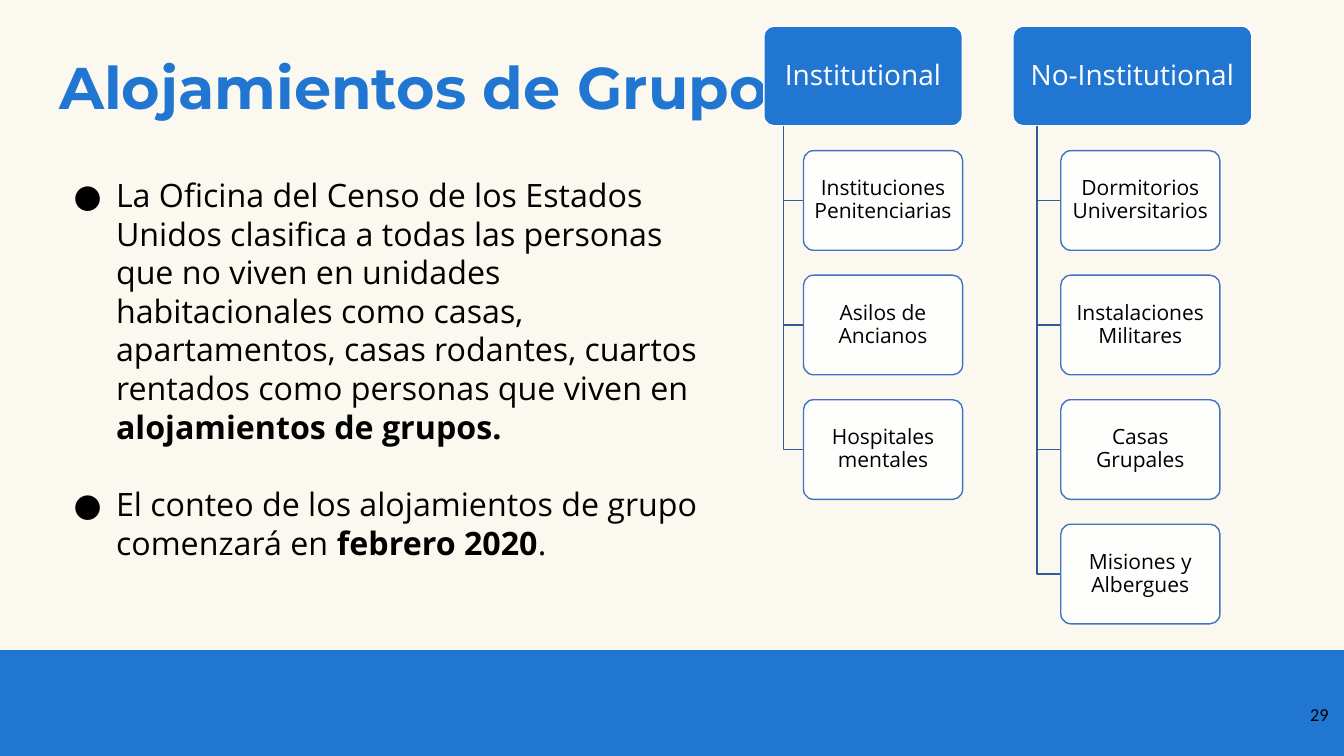
import dataclasses

import pptx
import pptx.dml.color
import pptx.enum.shapes
import pptx.enum.text
import pptx.oxml
import pptx.oxml.ns
import pptx.util

Cm = pptx.util.Cm
Pt = pptx.util.Pt
Kind = pptx.enum.shapes.MSO_SHAPE
Align = pptx.enum.text.PP_ALIGN
Anchor = pptx.enum.text.MSO_ANCHOR
NS = pptx.oxml.ns.nsdecls("a")


def rgb(code):
    return pptx.dml.color.RGBColor.from_string(code)


@dataclasses.dataclass(frozen=True)
class Theme:
    paper: str = "FBF9EF"
    blue: str = "2176D2"
    white: str = "FFFFFF"
    ink: str = "000000"
    edge: str = "4372C3"
    link: str = "345A99"
    display: str = "Montserrat"
    text: str = "Open Sans"
    number: str = "Calibri"
    title: int = 42
    body: int = 23
    head: int = 20
    card: int = 15
    page: int = 13


THEME = Theme()
WIDE, HIGH = 33.87, 19.05
CARD_W, CARD_H = 4.01, 2.51

POINTS = [
    [("La Oficina del Censo de los Estados Unidos clasifica a todas las "
      "personas que no viven en unidades habitacionales como casas, "
      "apartamentos, casas rodantes, cuartos rentados como personas que "
      "viven en ", False), ("alojamientos de grupos.", True)],
    [("El conteo de los alojamientos de grupo comenzará en ", False),
     ("febrero 2020", True), (".", False)],
]
GROUPS = [
    (19.25, 5, "Institutional",
     ["Instituciones Penitenciarias", "Asilos de Ancianos",
      "Hospitales mentales"]),
    (25.53, 6.02, "No-Institutional",
     ["Dormitorios Universitarios", "Instalaciones Militares",
      "Casas Grupales", "Misiones y Albergues"]),
]


def style(para, face, size, color, bold=False):
    para.font.name = face
    para.font.size = Pt(size)
    para.font.bold = bold
    para.font.color.rgb = rgb(color)


def place(shape, box):
    shape.left, shape.top, shape.width, shape.height = map(Cm, box)


def add_band(slide, box):
    band = slide.shapes.add_shape(Kind.RECTANGLE, *map(Cm, box))
    band.shadow.inherit = False
    band.fill.solid()
    band.fill.fore_color.rgb = rgb(THEME.blue)
    band.line.fill.background()


def set_title(slide, box, words):
    title = slide.shapes.title
    place(title, box)
    frame = title.text_frame
    frame.text = words
    frame.auto_size = pptx.enum.text.MSO_AUTO_SIZE.NONE
    frame.vertical_anchor = Anchor.TOP
    para = frame.paragraphs[0]
    para.alignment = Align.LEFT
    style(para, THEME.display, THEME.title, THEME.blue, True)


def add_bullet(para):
    props = para._p.get_or_add_pPr()
    props.set("marL", str(Cm(1.27)))
    props.set("indent", str(Cm(-1.07)))
    for xml in (f'<a:buClr {NS}><a:srgbClr val="{THEME.ink}"/></a:buClr>',
                f'<a:buFont {NS} typeface="{THEME.text}"/>',
                f'<a:buChar {NS} char="●"/>'):
        props.append(pptx.oxml.parse_xml(xml))


def set_body(slide, box, points):
    body = slide.placeholders[1]
    place(body, box)
    frame = body.text_frame
    frame.auto_size = pptx.enum.text.MSO_AUTO_SIZE.NONE
    for rank, runs in enumerate(points):
        para = frame.add_paragraph() if rank else frame.paragraphs[0]
        add_bullet(para)
        para.space_before = Pt(28 if rank else 0)
        style(para, THEME.text, THEME.body, THEME.ink)
        for words, bold in runs:
            run = para.add_run()
            run.text = words
            run.font.bold = bold


def add_card(slide, box, words, fill, edge, size, color):
    card = slide.shapes.add_shape(Kind.ROUNDED_RECTANGLE, *map(Cm, box))
    card.adjustments[0] = 0.1
    card.shadow.inherit = False
    card.fill.solid()
    card.fill.fore_color.rgb = rgb(fill)
    card.line.color.rgb = rgb(edge)
    card.line.width = Pt(1)
    frame = card.text_frame
    frame.word_wrap = True
    frame.vertical_anchor = Anchor.MIDDLE
    frame.margin_left = frame.margin_right = Cm(0.18)
    frame.margin_top = frame.margin_bottom = Cm(0.15)
    frame.text = words
    para = frame.paragraphs[0]
    para.alignment = Align.CENTER
    para.line_spacing = 0.9
    style(para, THEME.text, size, color)
    return card


def fade(shape, share):
    """Set the opacity of a solid fill, in percent."""
    tint = shape._element.spPr.find(".//" + pptx.oxml.ns.qn("a:srgbClr"))
    tint.append(pptx.oxml.parse_xml(f'<a:alpha {NS} val="{share * 1000}"/>'))


def add_elbow(slide, left, top, right, low):
    """Draw a line down from a header, then across to a card."""
    pen = slide.shapes.build_freeform(Cm(left), Cm(top))
    pen.add_line_segments([(Cm(left), Cm(low)), (Cm(right), Cm(low))],
                          close=False)
    elbow = pen.convert_to_shape()
    elbow.shadow.inherit = False
    elbow.fill.background()
    elbow.line.color.rgb = rgb(THEME.link)
    elbow.line.width = Pt(1)


def add_group(slide, left, top, width, head, items):
    """Draw a header with its cards hung below; indents follow its width."""
    add_card(slide, (left, top, width, CARD_H), head,
             THEME.blue, THEME.white, THEME.head, THEME.white)
    spine, inner = left + 0.1 * width, left + 0.2 * width
    for rank, words in enumerate(items, 1):
        high = top + rank * 1.25 * CARD_H
        add_elbow(slide, spine, top + CARD_H, inner, high + CARD_H / 2)
        card = add_card(slide, (inner, high, CARD_W, CARD_H), words,
                        THEME.white, THEME.edge, THEME.card, THEME.ink)
        fade(card, 89)


def add_number(slide, box, words):
    frame = slide.shapes.add_textbox(*map(Cm, box)).text_frame
    frame.word_wrap = True
    frame.text = words
    para = frame.paragraphs[0]
    para.alignment = Align.RIGHT
    style(para, THEME.number, THEME.page, THEME.ink)


def main():
    deck = pptx.Presentation()
    deck.slide_width, deck.slide_height = Cm(WIDE), Cm(HIGH)
    slide = deck.slides.add_slide(deck.slide_layouts[1])
    slide.background.fill.solid()
    slide.background.fill.fore_color.rgb = rgb(THEME.paper)
    add_band(slide, (0, 16.38, WIDE, HIGH - 16.38))
    set_title(slide, (1.24, 1.14, 26.16, 2.06), "Alojamientos de Grupo")
    for left, width, head, items in GROUPS:
        add_group(slide, left, 0.66, width, head, items)
    set_body(slide, (1.4, 4.29, 17.02, 12.07), POINTS)
    add_number(slide, (31.7, 17.6, 2.03, 1.45), "29")
    deck.save("out.pptx")


if __name__ == "__main__":
    main()
